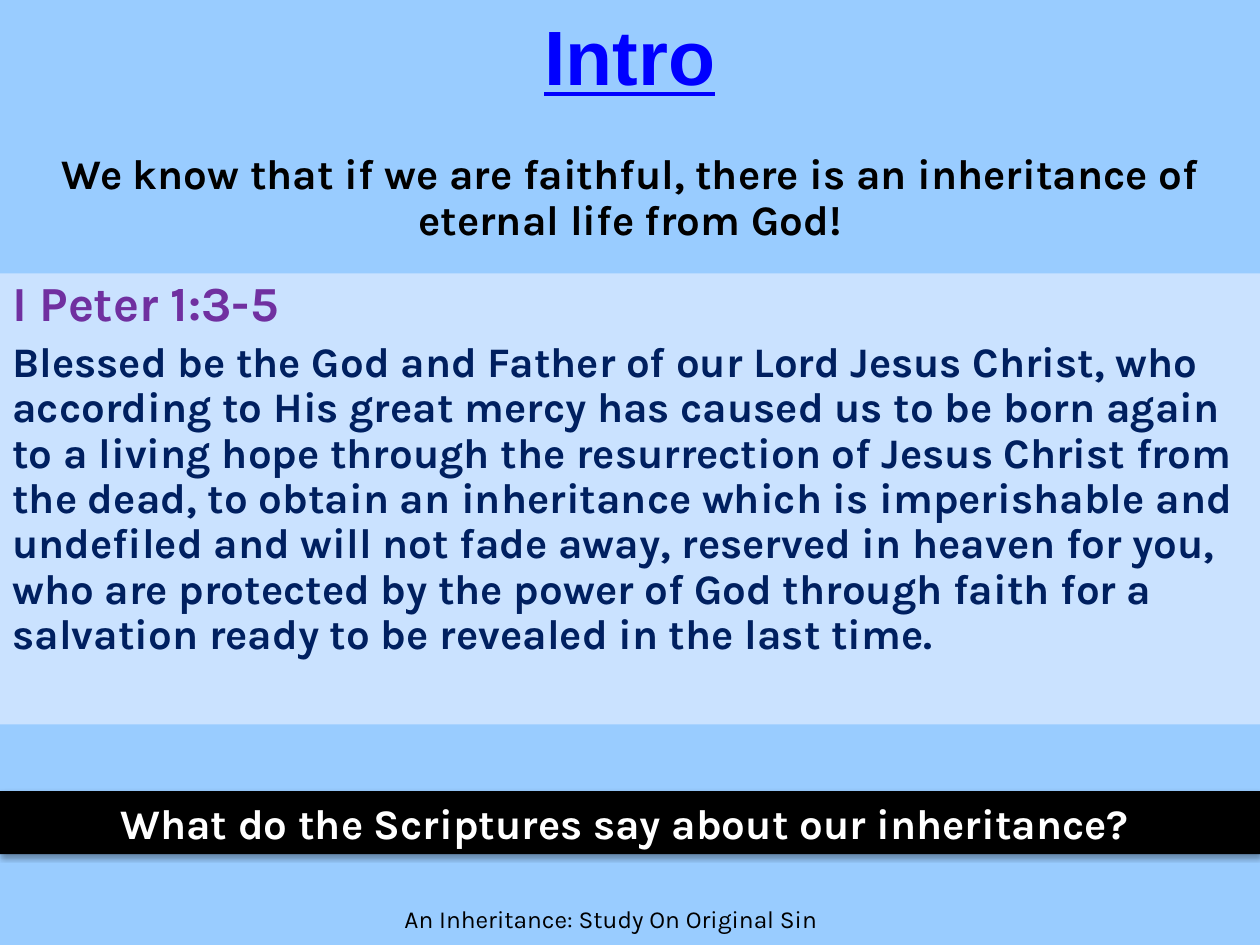
"""Build the Intro slide on inheritance in Scripture."""
import pptx
import pptx.util
import pptx.dml.color
import pptx.enum.text
import pptx.oxml
import pptx.oxml.ns

deck = pptx.Presentation()
deck.slide_width = pptx.util.Inches(10)
deck.slide_height = pptx.util.Inches(7.5)
slide = deck.slides.add_slide(deck.slide_layouts[6])
wide, high = deck.slide_width, deck.slide_height


def paint(fill, tone):
    fill.solid()
    fill.fore_color.rgb = pptx.dml.color.RGBColor.from_string(tone)


def write(text, top, tall, left=0, span=1, box=None, fill=None, size=24, tone="000000",
          font="Karla", bold=True, under=False, align="CENTER", lines=0.9, gap=0, mid=False):
    if box is None:
        place = [int(n) for n in (left * wide, top * high, span * wide, tall * high)]
        if fill:
            box = slide.shapes.add_shape(1, *place)
            box.shadow.inherit = False
            paint(box.fill, fill)
            box.line.fill.background()
        else:
            box = slide.shapes.add_textbox(*place)
        para = box.text_frame.paragraphs[0]
    else:
        para = box.text_frame.add_paragraph()
    box.text_frame.word_wrap = True
    anchor = pptx.enum.text.MSO_ANCHOR
    box.text_frame.vertical_anchor = anchor.MIDDLE if mid else anchor.TOP
    para.alignment = getattr(pptx.enum.text.PP_ALIGN, align)
    para.line_spacing = lines
    para.space_before = pptx.util.Pt(gap)
    run = para.add_run()
    run.text = text
    run.font.name, run.font.size = font, pptx.util.Pt(size)
    run.font.bold, run.font.underline = bold, under
    paint(run.font.fill, tone)
    return box


paint(slide.background.fill, "99CCFF")
row = 1 / 7.5

write("Intro", 0, 0.87 * row, left=0.05, span=0.9, size=44, tone="0000FF",
      font="Arial", under=True, lines=1, mid=True)
write("We know that if we are faithful, there is an inheritance of eternal life from God!",
      1.17 * row, row)
write("An Inheritance: Study On Original Sin", 7.15 * row, 0.35 * row,
      left=0.27, span=0.43, size=14, bold=False)

verse = write("I Peter 1:3-5", 2.17 * row, 3.58 * row, fill="CAE2FF", size=28,
              tone="7030A0", align="LEFT")
write("Blessed be the God and Father of our Lord Jesus Christ, who according to His great "
      "mercy has caused us to be born again to a living hope through the resurrection of "
      "Jesus Christ from the dead, to obtain an inheritance which is imperishable and "
      "undefiled and will not fade away, reserved in heaven for you, who are protected by "
      "the power of God through faith for a salvation ready to be revealed in the last time.",
      0, 0, box=verse, tone="002060", align="LEFT", gap=5)

band = write("What do the Scriptures say about our inheritance? ", 6.28 * row, 0.5 * row,
             fill="000000", tone="FFFFFF", lines=1)
band.text_frame.auto_size = pptx.enum.text.MSO_AUTO_SIZE.SHAPE_TO_FIT_TEXT
glow = band.element.spPr.find(pptx.oxml.ns.qn("a:effectLst"))
glow.append(pptx.oxml.parse_xml(
    f'<a:outerShdw {pptx.oxml.ns.nsdecls("a")} blurRad="39370" dist="22860" dir="5400000" '
    'rotWithShape="0"><a:srgbClr val="000000"><a:alpha val="35000"/></a:srgbClr>'
    '</a:outerShdw>'))

deck.save("out.pptx")
